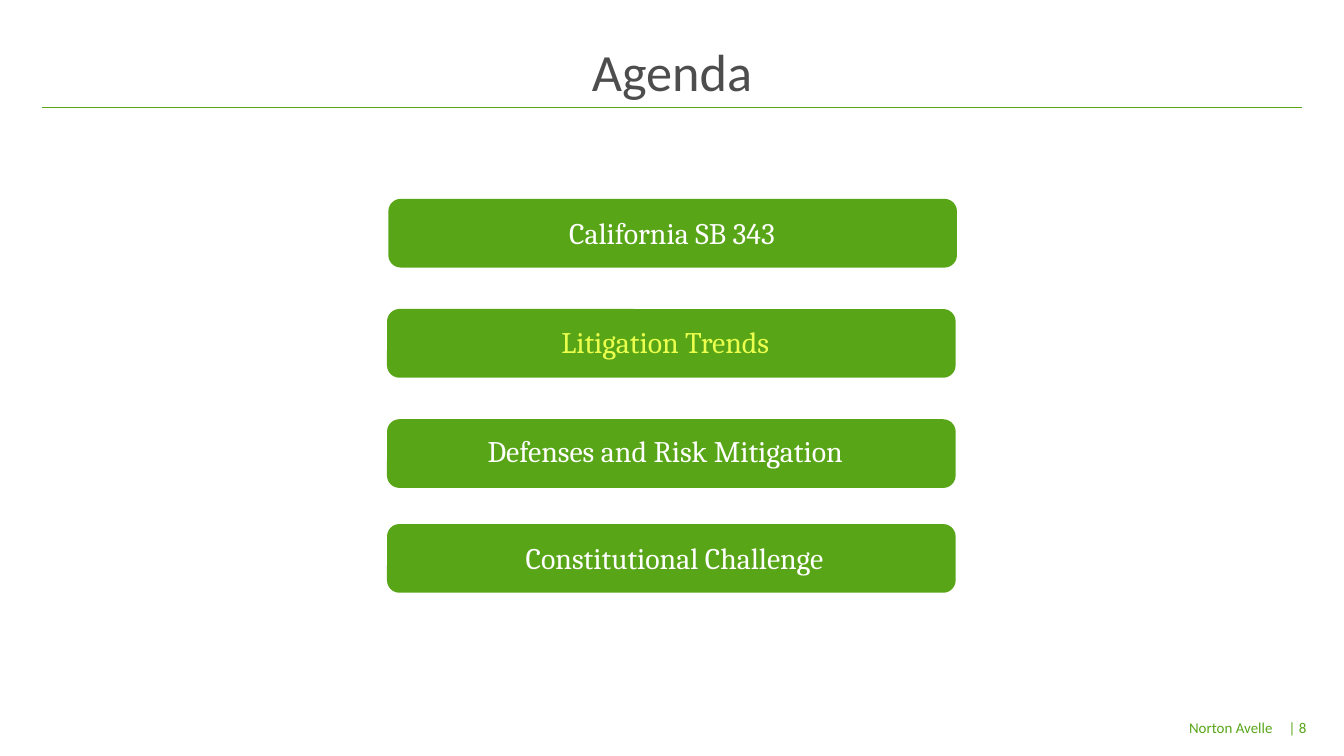
import pptx
import pptx.util
import pptx.dml.color
import pptx.enum.shapes
import pptx.enum.text
import pptx.oxml.ns
import lxml.etree
from dataclasses import dataclass

Inches, Pt = pptx.util.Inches, pptx.util.Pt
ALIGN, ANCHOR = pptx.enum.text.PP_ALIGN, pptx.enum.text.MSO_ANCHOR
RGB = pptx.dml.color.RGBColor.from_string


@dataclass(frozen=True)
class Theme:
    green: str = "58A618"
    grey: str = "4D4D4D"
    white: str = "FFFFFF"
    highlight: str = "EBFF4D"
    sans: str = "Calibri"
    serif: str = "Cambria"
    title: int = 28
    item: int = 16
    footer: int = 8


theme = Theme()

# Content
TITLE = "Agenda"
FIRM, PAGE = "Norton Avelle", "| 8"
CURRENT = "Litigation Trends"
# topic, bar left and top, label left, top and width
TOPICS = [
    ("California SB 343", 2.9, 1.49, 3.14, 1.55, 3.72),
    (CURRENT, 2.89, 2.31, 3.09, 2.36, 3.72),
    ("Defenses and Risk Mitigation", 2.89, 3.13, 3.09, 3.17, 3.72),
    ("Constitutional Challenge", 2.89, 3.91, 3.09, 3.97, 3.86),
]
SLIDE_W = 10
SLIDE_H = SLIDE_W * 9 / 16
BAR_W, BAR_H, LABEL_H = 4.21, 0.49, 0.37
MARGIN, RULE_Y = 0.31, 0.8


def add_text(s, text, box, size, font, color, align=ALIGN.CENTER,
             anchor=ANCHOR.TOP, insets=(0.1, 0.05, 0.1, 0.05), wrap=True):
    tf = s.shapes.add_textbox(*map(Inches, box)).text_frame
    tf.word_wrap = wrap
    tf.vertical_anchor = anchor
    tf.margin_left, tf.margin_top, tf.margin_right, tf.margin_bottom = map(Inches, insets)
    tf.text = text
    p = tf.paragraphs[0]
    p.alignment = align
    f = p.runs[0].font
    f.size, f.name, f.color.rgb = Pt(size), font, RGB(color)


def add_bar(s, left, top):
    sp = s.shapes.add_shape(pptx.enum.shapes.MSO_SHAPE.ROUNDED_RECTANGLE,
                            *map(Inches, (left, top, BAR_W, BAR_H)))
    sp.shadow.inherit = False
    sp.fill.solid()
    sp.fill.fore_color.rgb = RGB(theme.green)
    sp.line.color.rgb = RGB(theme.green)
    sp.line.width = Pt(1.5)


def add_rule(s):
    line = s.shapes.add_connector(
        pptx.enum.shapes.MSO_CONNECTOR.STRAIGHT,
        *map(Inches, (SLIDE_W - MARGIN, RULE_Y, MARGIN, RULE_Y)))
    line.line.color.rgb = RGB(theme.green)
    line.line.width = Pt(0.5)
    lxml.etree.SubElement(line._element.spPr, pptx.oxml.ns.qn("a:effectLst"))


prs = pptx.Presentation()
prs.slide_width, prs.slide_height = Inches(SLIDE_W), Inches(SLIDE_H)
s = prs.slides.add_slide(prs.slide_layouts[6])

# Rule and footer
add_rule(s)
footer = (theme.footer, theme.sans, theme.green, ALIGN.RIGHT, ANCHOR.MIDDLE)
add_text(s, FIRM, (6.3, 5.29, 3.17, 0.24), *footer, insets=(0, 0.05, 0, 0.05))
add_text(s, PAGE, (9.48, 5.29, 0.34, 0.24), *footer,
         insets=(0, 0.05, 0.1, 0.05), wrap=False)

# Title
add_text(s, TITLE, (MARGIN, 0.31, SLIDE_W - 2 * MARGIN, 0.49), theme.title, theme.sans,
         theme.grey, anchor=ANCHOR.BOTTOM, insets=(0, 0.04, 0, 0.04))

# Agenda bars with their labels, the current topic highlighted
for topic, bar_x, bar_y, x, y, w in TOPICS:
    add_bar(s, bar_x, bar_y)
    color = theme.highlight if topic == CURRENT else theme.white
    add_text(s, topic, (x, y, w, LABEL_H), theme.item, theme.serif, color)

prs.save("out.pptx")
